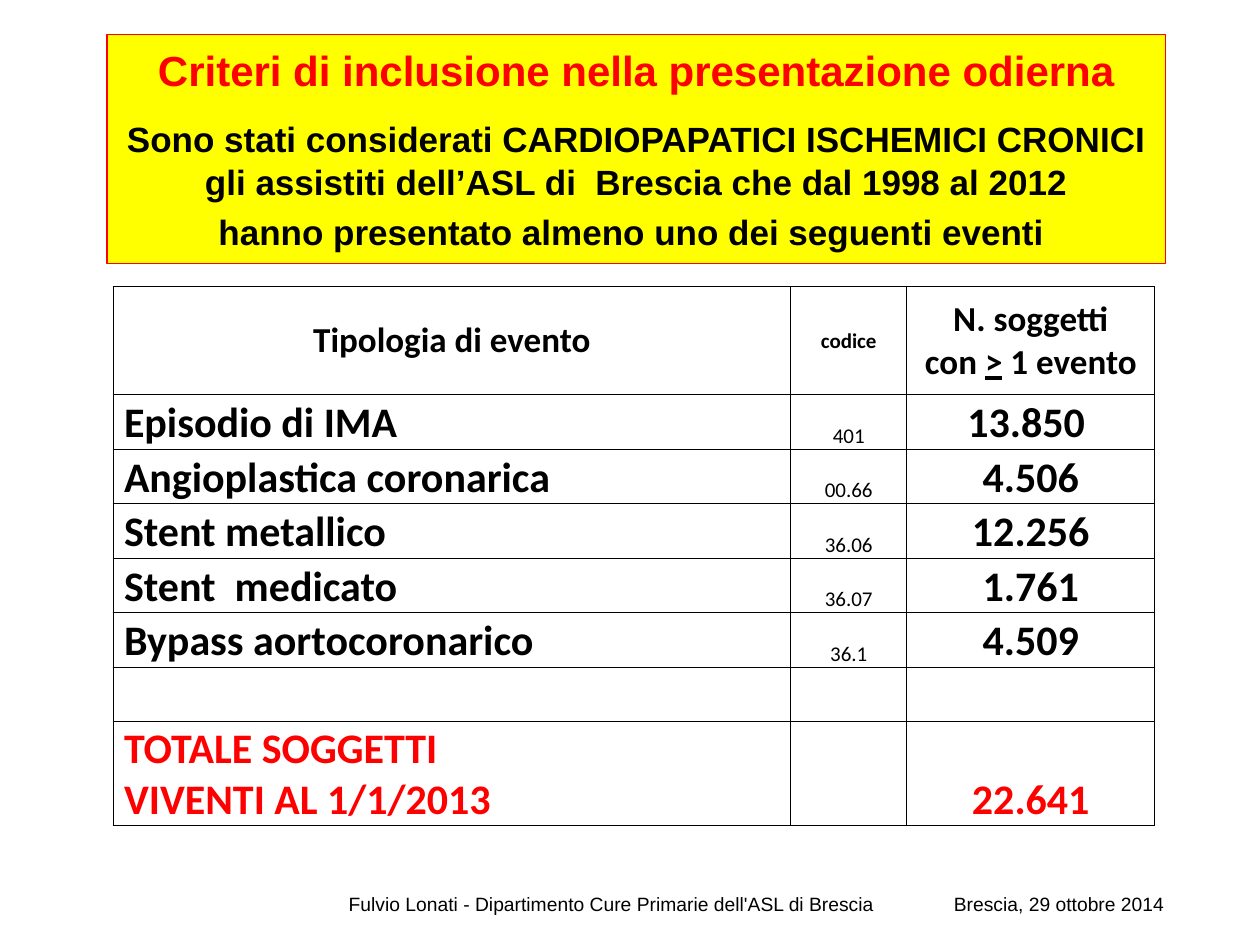
from dataclasses import dataclass

from lxml import etree
from pptx import Presentation
from pptx import util as u
from pptx.dml.color import RGBColor
from pptx.enum import shapes, text
from pptx.oxml import ns

LEFT, MID = text.PP_ALIGN.LEFT, text.PP_ALIGN.CENTER


@dataclass(frozen=True)
class Theme:
    ink: str = "000000"
    red: str = "FF0000"
    yellow: str = "FFFF00"
    paper: str = "FFFFFF"
    sans: str = "Arial"
    body: str = "Calibri"
    big: int = 24
    lead: int = 20
    code: int = 12
    foot: int = 11


class Deck:
    """Draw styled elements on the current slide."""

    def __init__(self, theme):
        self.theme = theme
        self.prs = Presentation()
        self.prs.slide_width, self.prs.slide_height = u.Cm(25.4), u.Cm(19.05)
        self.slide = self.prs.slides.add_slide(self.prs.slide_layouts[6])

    def style(self, para, size, color, face, bold=True, align=MID):
        para.alignment = align
        for run in para.runs:
            font = run.font
            font.name, font.size, font.bold = face, u.Pt(size), bold
            font.color.rgb = RGBColor.from_string(color)

    def banner(self, box, lines):
        t = self.theme
        shape = self.slide.shapes.add_shape(
            shapes.MSO_SHAPE.RECTANGLE, *map(u.Cm, box))
        shape.shadow.inherit = False
        shape.fill.solid()
        shape.fill.fore_color.rgb = RGBColor.from_string(t.yellow)
        shape.line.color.rgb = RGBColor.from_string(t.red)
        shape.line.width = u.Pt(0.75)
        frame = shape.text_frame
        frame.word_wrap = True
        frame.vertical_anchor = text.MSO_ANCHOR.MIDDLE
        frame.text = "\n".join(line for line, *_ in lines)
        for para, (_, size, color, gap) in zip(frame.paragraphs, lines):
            if gap:
                para.space_before = u.Pt(gap)
            self.style(para, size, color, t.sans)

    def footer(self, box, words, stop):
        t = self.theme
        frame = self.slide.shapes.add_textbox(*map(u.Cm, box)).text_frame
        frame.word_wrap = True
        para = frame.paragraphs[0]
        para.text = words
        tabs = etree.SubElement(para._p.get_or_add_pPr(), ns.qn("a:tabLst"))
        etree.SubElement(tabs, ns.qn("a:tab"), pos=str(u.Cm(stop)), algn="l")
        self.style(para, t.foot, t.ink, t.sans, False, LEFT)

    def border(self, cell):
        props = cell._tc.get_or_add_tcPr()
        for side in "LRTB":
            line = etree.SubElement(
                props, ns.qn("a:ln" + side), w=str(u.Pt(0.5)))
            fill = etree.SubElement(line, ns.qn("a:solidFill"))
            etree.SubElement(fill, ns.qn("a:srgbClr"), val=self.theme.ink)

    def cell(self, cell, words, size, color, bold, align, anchor):
        self.border(cell)
        cell.fill.solid()
        cell.fill.fore_color.rgb = RGBColor.from_string(self.theme.paper)
        cell.margin_left = u.Cm(0.22 if align == LEFT else 0.03)
        cell.margin_right = cell.margin_top = u.Cm(0.03)
        cell.margin_bottom = 0
        cell.vertical_anchor = anchor
        cell.text_frame.text = words
        for para in cell.text_frame.paragraphs:
            self.style(para, size, color, self.theme.body, bold, align)

    def table(self, box, widths, heights, rows):
        t = self.theme
        grid = self.slide.shapes.add_table(
            len(rows), len(widths), *map(u.Cm, box)).table
        grid.first_row = grid.horz_banding = False
        for col, width in zip(grid.columns, widths):
            col.width = u.Cm(width)
        for row, height in zip(grid.rows, heights):
            row.height = u.Cm(height)
        last = len(rows) - 1
        for r, row in enumerate(rows):
            head = r == 0
            anchor = text.MSO_ANCHOR.MIDDLE if head else text.MSO_ANCHOR.BOTTOM
            color = t.red if r == last else t.ink
            for c, words in enumerate(row):
                size = t.code if c == 1 else t.lead if head else t.big
                align = LEFT if c == 0 and not head else MID
                self.cell(grid.cell(r, c), words, size, color,
                          head or c != 1, align, anchor)
        return grid

    def mark(self, para, parts, line):
        t = self.theme
        para.text = ""
        for part in parts:
            run = para.add_run()
            run.text = part
            run.font.underline = part == line
        self.style(para, t.lead, t.ink, t.body)


def main():
    t = Theme()
    deck = Deck(t)
    deck.banner((2.16, 0.69, 21.34, 4.62), [
        ("Criteri di inclusione nella presentazione odierna", t.big, t.red, 0),
        ("Sono stati considerati CARDIOPAPATICI ISCHEMICI CRONICI",
         t.lead, t.ink, 13),
        ("gli assistiti dell’ASL di  Brescia che dal 1998 al 2012",
         t.lead, t.ink, 0),
        ("hanno presentato almeno uno dei seguenti eventi ",
         t.lead, t.ink, 5),
    ])
    deck.footer(
        (6.78, 17.86, 17.35, 0.81),
        "Fulvio Lonati - Dipartimento Cure Primarie dell'ASL di Brescia"
        "\tBrescia, 29 ottobre 2014", 12.2)
    grid = deck.table(
        (2.28, 5.77, 21, 10.87), (13.66, 2.34, 5), [2.18] + [1.1] * 6 + [2.09],
        [
            ("Tipologia di evento", "codice", "N. soggetti\ncon > 1 evento"),
            ("Episodio di IMA", "401", "13.850 "),
            ("Angioplastica coronarica", "00.66", "4.506"),
            ("Stent metallico", "36.06", "12.256"),
            ("Stent  medicato", "36.07", "1.761"),
            ("Bypass aortocoronarico", "36.1", "4.509"),
            ("", "", ""),
            ("TOTALE SOGGETTI\nVIVENTI AL 1/1/2013", "", "22.641"),
        ])
    deck.mark(grid.cell(0, 2).text_frame.paragraphs[1],
              ("con ", ">", " 1 evento"), ">")
    deck.prs.save("out.pptx")


if __name__ == "__main__":
    main()
